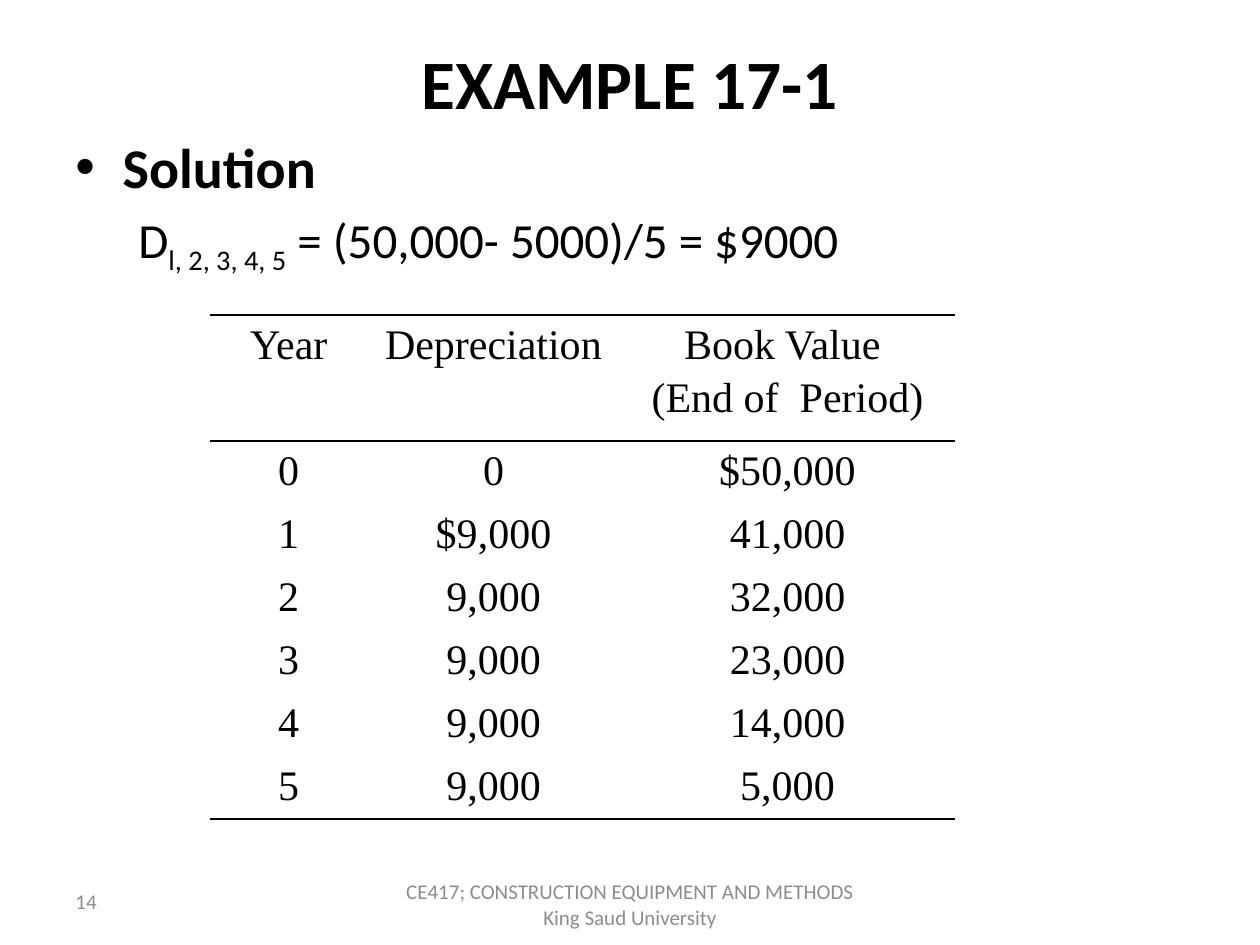
from lxml.etree import SubElement
from pptx import Presentation
from pptx.dml.color import RGBColor
from pptx.enum.text import MSO_ANCHOR, PP_ALIGN
from pptx.oxml.ns import qn
from pptx.util import Pt

BLACK = RGBColor(0x00, 0x00, 0x00)
GRAY = RGBColor(0x8C, 0x8C, 0x8C)

TITLE = {"name": "Calibri", "size": Pt(39.6), "bold": True}
HEADING = {"name": "Calibri", "size": Pt(32), "bold": True}
FORMULA = {"name": "Calibri", "size": Pt(28), "bold": False}
CELL = {"name": "Times New Roman", "size": Pt(24), "bold": False}
FOOTER = {"name": "Calibri", "size": Pt(12)}

COLUMN_WIDTHS = [90, 144, 192]
HEADER_HEIGHT = 72
ROW_HEIGHT = 36
OUTER_LINE = 1.5
HEADER_LINE = 1
ROWS = [
    ["Year", "Depreciation", "Book Value \n(End of  Period)"],
    ["0", "0", "$50,000"],
    ["1", "$9,000", "41,000"],
    ["2", "9,000", "32,000"],
    ["3", "9,000", "23,000"],
    ["4", "9,000", "14,000"],
    ["5", "9,000", "5,000"],
]


def apply(target, values):
    for key, value in values.items():
        setattr(target, key, value)


def add_span(para, text, style, color=BLACK):
    span = para.add_run()
    span.text = text
    apply(span.font, style)
    span.font.color.rgb = color
    return span


def add_frame(page, box, anchor=MSO_ANCHOR.MIDDLE):
    frame = page.shapes.add_textbox(*map(Pt, box)).text_frame
    apply(frame, {"word_wrap": True, "vertical_anchor": anchor})
    return frame


def add_line(page, box, text, style, color, align):
    para = add_frame(page, box).paragraphs[0]
    para.alignment = align
    add_span(para, text, style, color)


def set_indent(para, margin, indent, bullet=None):
    props = para._p.get_or_add_pPr()
    props.set("marL", str(Pt(margin)))
    props.set("indent", str(Pt(indent)))
    if bullet:
        SubElement(props, qn("a:buFont"), typeface="Arial")
        SubElement(props, qn("a:buChar"), char=bullet)
    else:
        SubElement(props, qn("a:buNone"))


def add_solution(page, box):
    frame = add_frame(page, box, MSO_ANCHOR.TOP)
    heading = frame.paragraphs[0]
    set_indent(heading, 27, -27, "•")
    add_span(heading, "Solution", HEADING)
    formula = frame.add_paragraph()
    set_indent(formula, 58.5, -22.5)
    apply(formula, {"level": 1, "space_before": Pt(5.6)})
    add_span(formula, "D", FORMULA)
    years = add_span(formula, "l, 2, 3, 4, 5", FORMULA)
    years._r.get_or_add_rPr().set("baseline", "-25000")
    add_span(formula, " = (50,000- 5000)/5 = $9000", FORMULA)


def set_borders(cell, top, bottom):
    props = cell._tc.get_or_add_tcPr()
    for side, width in {"L": 0, "R": 0, "T": top, "B": bottom}.items():
        line = SubElement(props, qn(f"a:ln{side}"), w=str(Pt(width)))
        if width:
            fill = SubElement(line, qn("a:solidFill"))
            SubElement(fill, qn("a:srgbClr"), val=str(BLACK))
        else:
            SubElement(line, qn("a:noFill"))


def fill_cell(cell, text, top, bottom):
    apply(cell, {"margin_left": Pt(5), "margin_right": Pt(5),
                 "margin_top": 0, "margin_bottom": 0,
                 "vertical_anchor": MSO_ANCHOR.TOP})
    set_borders(cell, top, bottom)
    cell.fill.background()
    frame = cell.text_frame
    for index, line in enumerate(text.split("\n")):
        para = frame.add_paragraph() if index else frame.paragraphs[0]
        apply(para, {"alignment": PP_ALIGN.CENTER, "line_spacing": 1.15})
        add_span(para, line, CELL)


def add_schedule(page, left, top):
    heights = [HEADER_HEIGHT] + [ROW_HEIGHT] * (len(ROWS) - 1)
    box = (left, top, sum(COLUMN_WIDTHS), sum(heights))
    table = page.shapes.add_table(len(ROWS), len(COLUMN_WIDTHS), *map(Pt, box)).table
    apply(table, {"first_row": False, "horz_banding": False})
    for column, width in zip(table.columns, COLUMN_WIDTHS):
        column.width = Pt(width)
    for row, height in zip(table.rows, heights):
        row.height = Pt(height)
    edges = [OUTER_LINE, HEADER_LINE] + [0] * (len(ROWS) - 2) + [OUTER_LINE]
    for row, values in enumerate(ROWS):
        for column, text in enumerate(values):
            fill_cell(table.cell(row, column), text, edges[row], edges[row + 1])


def main():
    deck = Presentation()
    apply(deck, {"slide_width": Pt(720), "slide_height": Pt(540)})
    page = deck.slides.add_slide(deck.slide_layouts[6])
    add_line(page, (36, 21.6, 648, 50.4), "EXAMPLE 17-1", TITLE, BLACK, PP_ALIGN.CENTER)
    add_solution(page, (36, 72, 648, 90))
    add_schedule(page, 120, 180)
    add_line(page, (36, 500.4, 168, 28.8), "14", FOOTER, GRAY, PP_ALIGN.LEFT)
    add_line(page, (222, 504, 276, 25.2),
             "CE417; CONSTRUCTION EQUIPMENT AND METHODS King Saud University",
             FOOTER, GRAY, PP_ALIGN.CENTER)
    deck.save("out.pptx")


if __name__ == "__main__":
    main()
